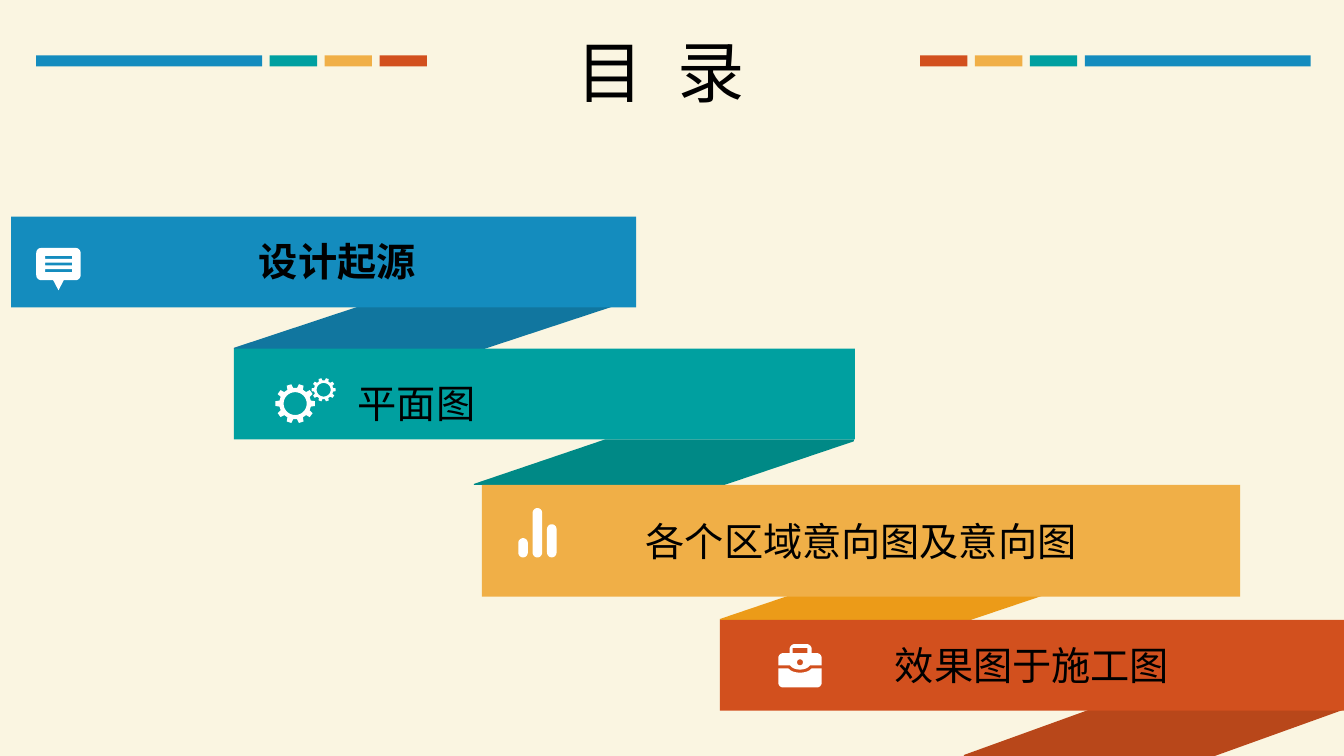
from dataclasses import dataclass
from math import cos, radians, sin

from lxml.etree import SubElement
from pptx import Presentation
from pptx.dml.color import RGBColor
from pptx.enum.shapes import MSO_SHAPE
from pptx.enum.text import MSO_ANCHOR, PP_ALIGN
from pptx.oxml.ns import qn
from pptx.util import Inches, Pt

COLOURS = {
    "cream": "FAF5E1", "white": "FFFFFF", "black": "000000",
    "blue": "148CBE", "teal": "00A0A0", "amber": "F0AF47", "red": "D2501E",
    "blue fold": "11769F", "teal fold": "008986",
    "amber fold": "EC9B18", "red fold": "B8471A",
}
SANS = "Noto Sans CJK SC"
TOP_COLOURS = ["blue", "teal", "amber", "red"]


@dataclass
class Box:
    """A rectangle in inches, divided by shares of its own size."""
    left: float
    top: float
    width: float
    height: float

    def inner(self, x, y, width, height):
        """Return the box at the given shares."""
        return Box(self.left + x * self.width, self.top + y * self.height,
                   width * self.width, height * self.height)

    def point(self, x, y):
        """Return the point at the given shares."""
        return Inches(self.left + x * self.width), Inches(self.top + y * self.height)

    def frame(self):
        """Return the four lengths for a new shape."""
        return [Inches(n) for n in (self.left, self.top, self.width, self.height)]


def paint(shape, colour):
    """Give a shape a flat fill without line or shadow."""
    shape.shadow.inherit = False
    shape.fill.solid()
    shape.fill.fore_color.rgb = RGBColor.from_string(COLOURS[colour])
    shape.line.fill.background()
    return shape


def rectangle(shapes, box, colour):
    """Add a plain rectangle."""
    return paint(shapes.add_shape(MSO_SHAPE.RECTANGLE, *box.frame()), colour)


def outline(shapes, box, contours, colour):
    """Add one freeform from closed contours given in shares of the box."""
    builder = None
    for contour in contours:
        first, *rest = [box.point(x, y) for x, y in contour]
        if builder is None:
            builder = shapes.build_freeform(*first)
        else:
            builder.move_to(*first)
        builder.add_line_segments(rest, close=True)
    return paint(builder.convert_to_shape(), colour)


def arc(x, y, radius_x, radius_y, start, end, steps=8):
    """Return points along an elliptical arc, angles in degrees."""
    angles = [radians(start + (end - start) * i / steps) for i in range(steps + 1)]
    return [(x + radius_x * cos(a), y + radius_y * sin(a)) for a in angles]


def rounded(x, y, width, height, radius_x, radius_y):
    """Return the contour of a rounded rectangle."""
    left, right = x + radius_x, x + width - radius_x
    top, bottom = y + radius_y, y + height - radius_y
    corners = [(right, bottom), (left, bottom), (left, top), (right, top)]
    return [point for i, (cx, cy) in enumerate(corners)
            for point in arc(cx, cy, radius_x, radius_y, 90 * i, 90 * i + 90)]


def block(x, y, width, height):
    """Return the contour of a rectangle."""
    return [(x, y), (x, y + height), (x + width, y + height), (x + width, y)]


def chat_icon(shapes, box):
    """Draw a speech bubble with three lines."""
    outline(shapes, box, [[(0.36, 0.72), (0.64, 0.72), (0.5, 1)]], "white")
    lines = [block(0.2, 0.19 + 0.155 * i, 0.61, 0.07) for i in range(3)]
    outline(shapes, box, [rounded(0, 0, 1, 0.76, 0.11, 0.12)] + lines, "white")


def gears_icon(shapes, box):
    """Draw a large and a small gear of ten teeth."""
    teeth = [(0.5 + r * cos(radians(36 * i + a)), 0.5 + r * sin(radians(36 * i + a)))
             for i in range(10)
             for r, a in ((0.4, -11), (0.5, -7), (0.5, 7), (0.4, 11))]
    hole = arc(0.5, 0.5, 0.29, 0.29, 360, 0, 32)
    for share in ((0, 0.13, 0.66, 0.87), (0.6, 0, 0.4, 0.52)):
        outline(shapes, box.inner(*share), [teeth, hole], "white")


def bars_icon(shapes, box):
    """Draw three round-ended columns."""
    for i, height in enumerate((0.39, 1, 0.67)):
        bar = rounded(0.375 * i, 1 - height, 0.25, height, 0.125, 0.1)
        outline(shapes, box, [bar], "white")


def case_icon(shapes, box):
    """Draw a briefcase in two halves."""
    lower = ([(0, 0.56)] + arc(0.5, 0.5, 0.29, 0.16, 158, 22) + [(1, 0.56)]
             + arc(0.89, 0.89, 0.11, 0.11, 0, 90) + arc(0.11, 0.89, 0.11, 0.11, 90, 180))
    upper = ([(0, 0.49)] + arc(0.5, 0.43, 0.25, 0.16, 158, 22) + [(1, 0.49)]
             + arc(0.89, 0.32, 0.11, 0.11, 0, -90) + [(0.77, 0.21)]
             + arc(0.65, 0.12, 0.12, 0.12, 0, -90)
             + arc(0.38, 0.12, 0.12, 0.12, -90, -180) + [(0.26, 0.21)]
             + arc(0.11, 0.32, 0.11, 0.11, -90, -180))
    lock = arc(0.5, 0.42, 0.07, 0.07, 360, 0, 24)
    outline(shapes, box, [lower], "white")
    outline(shapes, box, [upper, block(0.33, 0.09, 0.34, 0.12), lock], "white")


def add_span(para, text, size, face, bold=False, spacing=0):
    """Add one run of black text."""
    span = para.add_run()
    span.text = text
    span.font.size = Pt(size)
    span.font.bold = bold
    span.font.name = face
    span.font.color.rgb = RGBColor.from_string(COLOURS["black"])
    properties = span._r.get_or_add_rPr()
    SubElement(properties, qn("a:ea")).set("typeface", face)
    if spacing:
        properties.set("spc", str(spacing * 100))


def text_box(page, box):
    """Add a wrapping text box and return its first paragraph."""
    frame = page.shapes.add_textbox(*box.frame()).text_frame
    frame.word_wrap = True
    return frame.paragraphs[0]


def header(page, box):
    """Place the title between two mirrored rows of coloured bars."""
    long, short, gap = 2.24 / box.width, 0.47 / box.width, 0.075 / box.width
    start = 0
    for colour, width in zip(TOP_COLOURS, (long, short, short, short)):
        for x in (start, 1 - start - width):
            rectangle(page.shapes, box.inner(x, 0, width, 1), colour)
        start += width + gap
    para = text_box(page, Box(5.36, box.top - 0.3, 2.79, 0.91))
    para._p.get_or_add_pPr().set("marL", str(Inches(0.26)))
    add_span(para, "目", 48, "Arial")
    add_span(para, " ", 48, "Arial", spacing=11)
    add_span(para, "录", 48, "Arial")


def fold(page, box, colour):
    """Draw the slanted ribbon back that leads to the next banner."""
    points = [(0.345, 0), (1, 0), (1, 0.04), (0.66, 1), (0, 1), (0, 0.98)]
    outline(page.shapes, box, [points], colour)


def banner(page, box, colour, icon, icon_box, label, style):
    """Draw one banner with its icon and its label."""
    shape = rectangle(page.shapes, box, colour)
    icon(page.shapes.add_group_shape().shapes, icon_box)
    label_box, align, face, bold = style
    if label_box:
        para = text_box(page, label_box)
    else:
        shape.text_frame.word_wrap = True
        shape.text_frame.vertical_anchor = MSO_ANCHOR.MIDDLE
        para = shape.text_frame.paragraphs[0]
    para.alignment = align
    add_span(para, label, 28, face, bold)


def contents_page(deck):
    """Build the contents slide with four stepped banners."""
    page = deck.slides.add_slide(deck.slide_layouts[6])
    page.background.fill.solid()
    page.background.fill.fore_color.rgb = RGBColor.from_string(COLOURS["cream"])
    header(page, Box(0.36, 0.55, 12.64, 0.11))
    inside = (None, PP_ALIGN.CENTER, SANS, False)
    first = (Box(0.8, 2.31, 5.09, 0.57), PP_ALIGN.CENTER, "Noto Sans CJK JP", True)
    second = (Box(3.45, 3.71, 4.83, 0.57), PP_ALIGN.LEFT, "Arial", False)
    folds = [(2.32, 3.02, 0.44), (4.7, 4.36, 0.45), (7.14, 5.7, 0.45), (9.56, 7.02, 0.48)]
    for colour, (left, top, height) in zip(TOP_COLOURS, folds):
        fold(page, Box(left, top, 3.77, height), f"{colour} fold")
    banners = [
        (Box(0.11, 2.15, 6.2, 0.9), chat_icon, Box(0.36, 2.46, 0.44, 0.42), "设计起源", first),
        (Box(2.32, 3.46, 6.16, 0.9), gears_icon, Box(2.73, 3.75, 0.6, 0.45), "平面图", second),
        (Box(4.78, 4.81, 7.52, 1.11), bars_icon, Box(5.14, 5.04, 0.38, 0.49),
         "各个区域意向图及意向图", inside),
        (Box(7.14, 6.15, 6.19, 0.9), case_icon, Box(7.72, 6.39, 0.43, 0.43),
         "效果图于施工图", inside),
    ]
    for colour, (box, icon, icon_box, label, style) in zip(TOP_COLOURS, banners):
        banner(page, box, colour, icon, icon_box, label, style)


def main():
    """Create the deck and save it."""
    deck = Presentation()
    deck.slide_width, deck.slide_height = Inches(13.33), Inches(7.5)
    contents_page(deck)
    deck.save("out.pptx")


if __name__ == "__main__":
    main()
